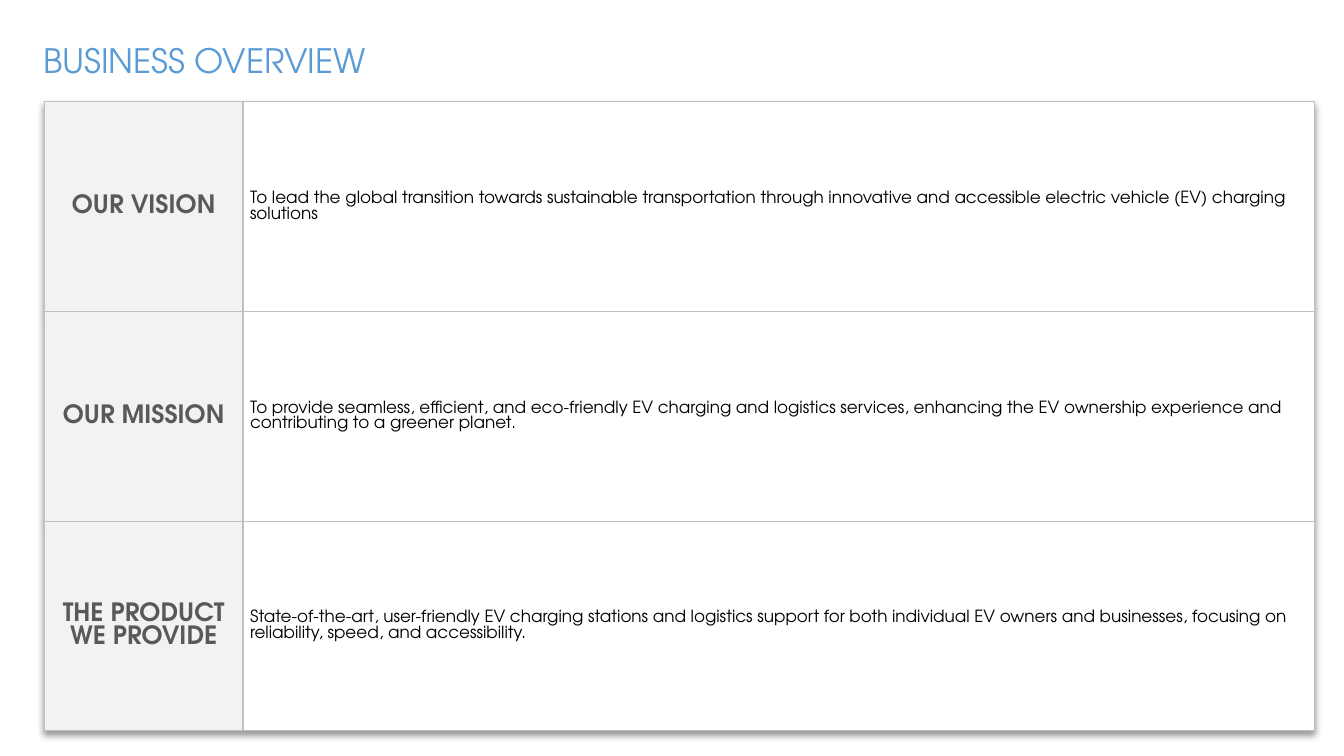
"""Build the business overview slide: a title above a table of three statements."""
from dataclasses import dataclass

from lxml import etree
from pptx import Presentation
from pptx.dml.color import RGBColor
from pptx.enum.text import MSO_ANCHOR, MSO_AUTO_SIZE, PP_ALIGN
from pptx.oxml.ns import qn
from pptx.slide import Slide
from pptx.table import Table, _Cell
from pptx.text.text import TextFrame
from pptx.util import Inches, Pt

LEFT, CENTER = PP_ALIGN.LEFT, PP_ALIGN.CENTER
TOP, MIDDLE = MSO_ANCHOR.TOP, MSO_ANCHOR.MIDDLE
GROW = MSO_AUTO_SIZE.SHAPE_TO_FIT_TEXT
TITLE_ONLY = 5
BORDER_SIDES = ("a:lnL", "a:lnR", "a:lnT", "a:lnB")


@dataclass(frozen=True)
class TextStyle:
    size: float
    color: str
    bold: bool
    align: PP_ALIGN


@dataclass(frozen=True)
class Theme:
    font: str = "TeX Gyre Adventor"
    title: TextStyle = TextStyle(24, "5B9BD5", False, LEFT)
    label: TextStyle = TextStyle(18, "595959", True, CENTER)
    statement: TextStyle = TextStyle(12, "000000", False, LEFT)
    label_fill: str = "F2F2F2"
    statement_fill: str = "FFFFFF"
    border: str = "BFBFBF"
    border_width: float = 1
    shadow: str = "000000"


@dataclass(frozen=True)
class Statement:
    label: str
    text: str


THEME = Theme()
STATEMENTS = (
    Statement("OUR VISION", "To lead the global transition towards sustainable transportation "
              "through innovative and accessible electric vehicle (EV) charging solutions"),
    Statement("OUR MISSION", "To provide seamless, efficient, and eco-friendly EV charging and "
              "logistics services, enhancing the EV ownership experience and contributing to a "
              "greener planet."),
    Statement("THE PRODUCT WE PROVIDE", "State-of-the-art, user-friendly EV charging stations and "
              "logistics support for both individual EV owners and businesses, focusing on "
              "reliability, speed, and accessibility."),
)
COLUMN_WIDTHS = (1.97, 10.63)
ROW_HEIGHT = 2.08


def set_all(target: object, values: dict) -> None:
    """Set each named attribute of the target."""
    for name, value in values.items():
        setattr(target, name, value)


def write(frame: TextFrame, text: str, style: TextStyle) -> None:
    """Put one styled paragraph into a text frame."""
    para = frame.paragraphs[0]
    para.alignment = style.align
    span = para.add_run()
    span.text = text
    set_all(span.font, {"name": THEME.font, "size": Pt(style.size), "bold": style.bold})
    span.font.color.rgb = RGBColor.from_string(style.color)


def add_color(parent: etree._Element, color: str) -> etree._Element:
    """Append an RGB colour element and return it."""
    return etree.SubElement(parent, qn("a:srgbClr"), val=color)


def add_borders(cell: _Cell) -> None:
    """Draw a solid line on every side of a cell."""
    properties = cell._tc.get_or_add_tcPr()
    for position, side in enumerate(BORDER_SIDES):
        line = etree.Element(qn(side), w=str(Pt(THEME.border_width)))
        add_color(etree.SubElement(line, qn("a:solidFill")), THEME.border)
        properties.insert(position, line)


def add_shadow(table: Table) -> None:
    """Give the table a soft shadow below it."""
    effects = etree.Element(qn("a:effectLst"))
    table._tbl.tblPr.insert(0, effects)
    shadow = etree.SubElement(effects, qn("a:outerShdw"), blurRad=str(Pt(4)),
                              dist=str(Pt(3)), dir="5400000", algn="t", rotWithShape="0")
    etree.SubElement(add_color(shadow, THEME.shadow), qn("a:alpha"), val="40000")


def fill_cell(cell: _Cell, text: str, style: TextStyle, fill: str, margins: dict) -> None:
    """Write, colour and outline one table cell."""
    set_all(cell, {"vertical_anchor": MIDDLE, **margins})
    cell.fill.solid()
    cell.fill.fore_color.rgb = RGBColor.from_string(fill)
    write(cell.text_frame, text, style)
    add_borders(cell)


def add_title(page: Slide, text: str) -> None:
    """Place and write the slide title."""
    box = page.shapes.title
    set_all(box, {"left": Inches(0.33), "top": Inches(0.35),
                  "width": Inches(8.08), "height": Inches(0.5)})
    set_all(box.text_frame, {"word_wrap": True, "auto_size": GROW, "vertical_anchor": TOP})
    write(box.text_frame, text, THEME.title)


def add_statements(page: Slide) -> None:
    """Add the table with one row for each statement."""
    table = page.shapes.add_table(
        len(STATEMENTS), len(COLUMN_WIDTHS), Inches(0.44), Inches(1.01),
        Inches(sum(COLUMN_WIDTHS)), Inches(ROW_HEIGHT * len(STATEMENTS))).table
    set_all(table, {"first_row": False, "horz_banding": False})
    for column, width in zip(table.columns, COLUMN_WIDTHS):
        column.width = Inches(width)
    tight = {"margin_left": Inches(0.07), "margin_right": Inches(0.07),
             "margin_top": 0, "margin_bottom": 0}
    for row, statement in zip(table.rows, STATEMENTS):
        row.height = Inches(ROW_HEIGHT)
        label, body = row.cells
        fill_cell(label, statement.label, THEME.label, THEME.label_fill, {})
        fill_cell(body, statement.text, THEME.statement, THEME.statement_fill, tight)
    add_shadow(table)


def main() -> None:
    """Build and save the deck."""
    deck = Presentation()
    set_all(deck, {"slide_width": Inches(13.33), "slide_height": Inches(7.5)})
    page = deck.slides.add_slide(deck.slide_layouts[TITLE_ONLY])
    add_title(page, "BUSINESS OVERVIEW")
    add_statements(page)
    deck.save("out.pptx")


if __name__ == "__main__":
    main()
